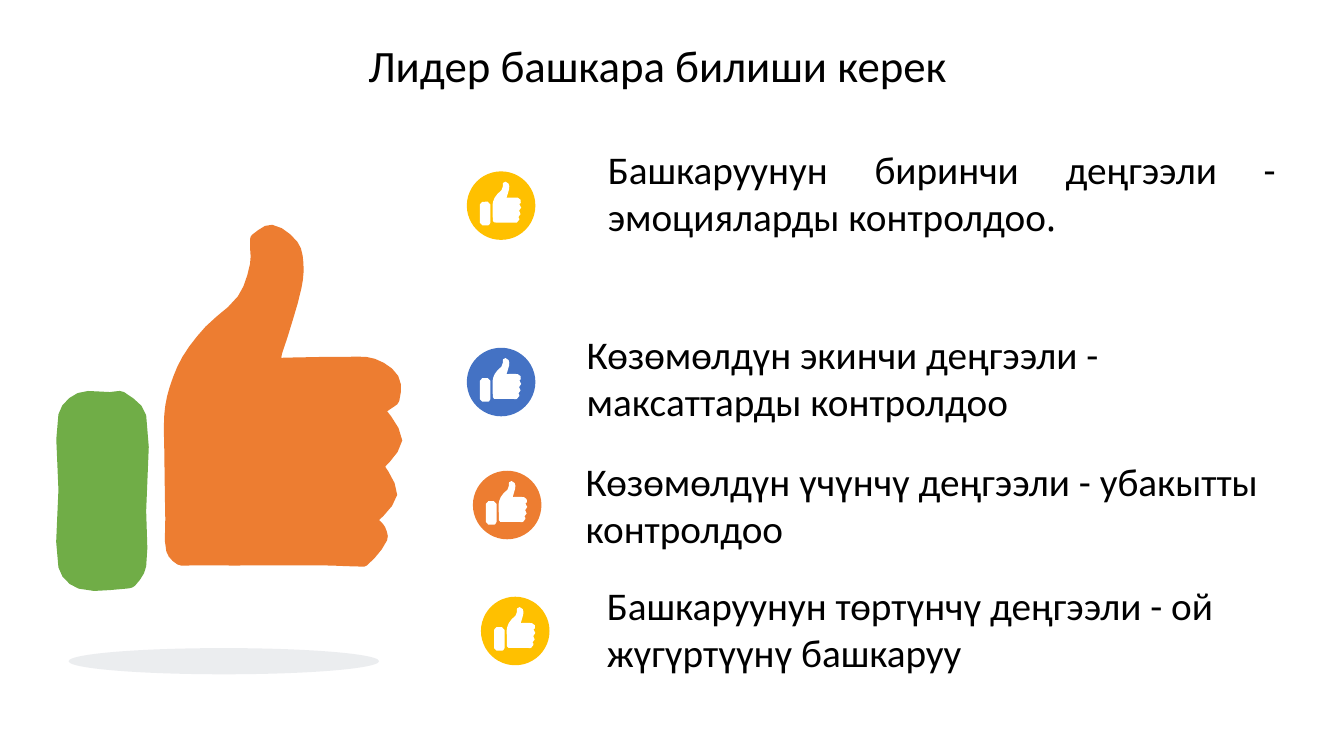
from dataclasses import dataclass
from math import dist

from lxml import etree
from pptx import Presentation
from pptx.dml.color import RGBColor
from pptx.enum.shapes import MSO_SHAPE
from pptx.enum.text import MSO_ANCHOR, MSO_AUTO_SIZE, PP_ALIGN
from pptx.oxml.ns import qn
from pptx.util import Inches, Pt

OVAL = MSO_SHAPE.OVAL
TOP = MSO_ANCHOR.TOP
FIT_SHAPE = MSO_AUTO_SIZE.SHAPE_TO_FIT_TEXT
LEFT, CENTER, JUSTIFY = PP_ALIGN.LEFT, PP_ALIGN.CENTER, PP_ALIGN.JUSTIFY

BLACK = RGBColor(0x00, 0x00, 0x00)
WHITE = RGBColor(0xFF, 0xFF, 0xFF)
ORANGE = RGBColor(0xED, 0x7D, 0x31)
GREEN = RGBColor(0x70, 0xAD, 0x47)
GOLD = RGBColor(0xFF, 0xC0, 0x00)
BLUE = RGBColor(0x44, 0x72, 0xC4)
SLATE = RGBColor(0x44, 0x54, 0x6A)

Point = tuple[float, float]

# Thumb outlines in inches at full size; corners stay sharp
THUMB_ORIGIN = (0.58, 2.21)
HAND = [
    (2.79, 3.55), (3.45, 3.54), (3.72, 3.56), (3.95, 3.73), (3.96, 3.98),
    (3.87, 4.06), (3.84, 4.08), (3.99, 4.37), (3.82, 4.63), (3.94, 4.91),
    (3.76, 5.16), (3.82, 5.23), (3.84, 5.36), (3.64, 5.61), (3.55, 5.62),
    (3.23, 5.61), (1.89, 5.61), (1.76, 5.6), (1.65, 5.47), (1.64, 5.15),
    (1.63, 4.47), (1.63, 4.11), (1.68, 3.85), (1.81, 3.54), (2.04, 3.24),
    (2.36, 2.94), (2.48, 2.62), (2.48, 2.39), (2.5, 2.33), (2.7, 2.23),
    (2.95, 2.4), (3.01, 2.61), (2.99, 2.86), (2.86, 3.32), (2.8, 3.5),
]
HAND_CORNERS = {(2.79, 3.55), (3.84, 4.08), (3.82, 4.63), (3.76, 5.16)}
CUFF = [
    (0.58, 4.86), (0.58, 4.11), (0.77, 3.9), (1.09, 3.89), (1.23, 3.89),
    (1.45, 4.12), (1.45, 5.07), (1.45, 5.62), (1.34, 5.81), (1.25, 5.84),
    (0.78, 5.84), (0.58, 5.63),
]
BADGE_SIZE = 0.68
BADGE_THUMB_SCALE = 0.12
LARGE_STEPS, BADGE_STEPS = 3, 1


@dataclass(frozen=True)
class Level:
    badge_left: float
    badge_top: float
    color: RGBColor
    text_left: float
    text_top: float
    text_width: float
    text: str
    align: PP_ALIGN = LEFT
    ending: str = ""


LEVELS = [
    Level(4.63, 1.7, GOLD, 5.93, 1.39, 6.82,
          "Башкаруунун биринчи деңгээли - эмоцияларды контролдоо", JUSTIFY, ". "),
    Level(4.63, 3.45, BLUE, 5.72, 3.23, 7.12,
          "Көзөмөлдүн экинчи деңгээли - максаттарды контролдоо"),
    Level(4.69, 4.67, ORANGE, 5.71, 4.49, 7.4,
          "Көзөмөлдүн үчүнчү деңгээли - убакытты контролдоо"),
    Level(4.77, 5.92, GOLD, 5.92, 5.72, 6.83,
          "Башкаруунун төртүнчү деңгээли - ой жүгүртүүнү башкаруу"),
]


def paint(shape, color: RGBColor) -> None:
    shape.shadow.inherit = False
    shape.fill.solid()
    shape.fill.fore_color.rgb = color
    shape.line.fill.background()


def smooth_outline(points: list[Point], corners: set[Point],
                   steps: int) -> list[Point]:
    """Sample a closed curve that runs through the points."""
    count = len(points)
    tangents = []
    for i, point in enumerate(points):
        before, after = points[i - 1], points[(i + 1) % count]
        length = dist(before, after)
        sharp = point in corners
        tangents.append(tuple(0 if sharp else (b - a) / length
                              for a, b in zip(before, after)))
    outline = []
    for i, start in enumerate(points):
        j = (i + 1) % count
        end = points[j]
        reach = dist(start, end) / 3
        for step in range(steps):
            t = step / steps
            u = 1 - t
            outline.append(tuple(
                u**3 * a + 3 * u**2 * t * (a + reach * ta)
                + 3 * u * t**2 * (b - reach * tb) + t**3 * b
                for a, b, ta, tb in zip(start, end, tangents[i], tangents[j])))
    return outline


def draw_thumb(shapes, left: float, top: float, scale: float, steps: int,
               hand_color: RGBColor, cuff_color: RGBColor) -> None:
    parts = [(HAND, HAND_CORNERS, hand_color), (CUFF, set(), cuff_color)]
    for points, corners, color in parts:
        outline = [(Inches(left + (x - THUMB_ORIGIN[0]) * scale),
                    Inches(top + (y - THUMB_ORIGIN[1]) * scale))
                   for x, y in smooth_outline(points, corners, steps)]
        builder = shapes.build_freeform(*outline[0], scale=1.0)
        builder.add_line_segments(outline[1:], close=True)
        paint(builder.convert_to_shape(), color)


def draw_badge(page, level: Level) -> None:
    group = page.shapes.add_group_shape()
    circle = group.shapes.add_shape(
        OVAL, Inches(level.badge_left), Inches(level.badge_top),
        Inches(BADGE_SIZE), Inches(BADGE_SIZE))
    paint(circle, level.color)
    draw_thumb(group.shapes, level.badge_left + 0.13, level.badge_top + 0.1,
               BADGE_THUMB_SCALE, BADGE_STEPS, WHITE, WHITE)


def write_text(box, runs: list[tuple[str, str]], size: float,
               align: PP_ALIGN) -> None:
    frame = box.text_frame
    frame_format = {"word_wrap": True, "auto_size": FIT_SHAPE,
                    "vertical_anchor": TOP}
    for name, value in frame_format.items():
        setattr(frame, name, value)
    para = frame.paragraphs[0]
    para.alignment = align
    para.line_spacing = 1.0
    for text, font_name in runs:
        span = para.add_run()
        span.text = text
        for name, value in {"name": font_name, "size": Pt(size)}.items():
            setattr(span.font, name, value)
        span.font.color.rgb = BLACK


def main() -> None:
    deck = Presentation()
    deck.slide_width, deck.slide_height = Inches(13.33), Inches(7.5)
    page = deck.slides.add_slide(deck.slide_layouts[5])

    # Title
    title = page.shapes.title
    title_place = {"left": 1.53, "top": 0.32, "width": 9.99, "height": 0.66}
    for name, value in title_place.items():
        setattr(title, name, Inches(value))
    write_text(title, [("Лидер башкара билиши керек", "Calibri")], 32, CENTER)

    # Large thumb and the pale ellipse under it
    large_thumb = page.shapes.add_group_shape()
    draw_thumb(large_thumb.shapes, *THUMB_ORIGIN, 1, LARGE_STEPS, ORANGE, GREEN)
    ground = page.shapes.add_shape(OVAL, Inches(0.68), Inches(6.43),
                                   Inches(3.08), Inches(0.26))
    paint(ground, SLATE)
    ground_color = ground.element.spPr.find(qn("a:solidFill"))[0]
    etree.SubElement(ground_color, qn("a:alpha"), val="10000")

    # Levels of control
    for level in LEVELS:
        draw_badge(page, level)
        box = page.shapes.add_textbox(
            Inches(level.text_left), Inches(level.text_top),
            Inches(level.text_width), Inches(1.04))
        runs = [(level.text, "Calibri")]
        if level.ending:
            runs.append((level.ending, "Open Sans"))
        write_text(box, runs, 28, level.align)

    deck.save("out.pptx")


if __name__ == "__main__":
    main()
